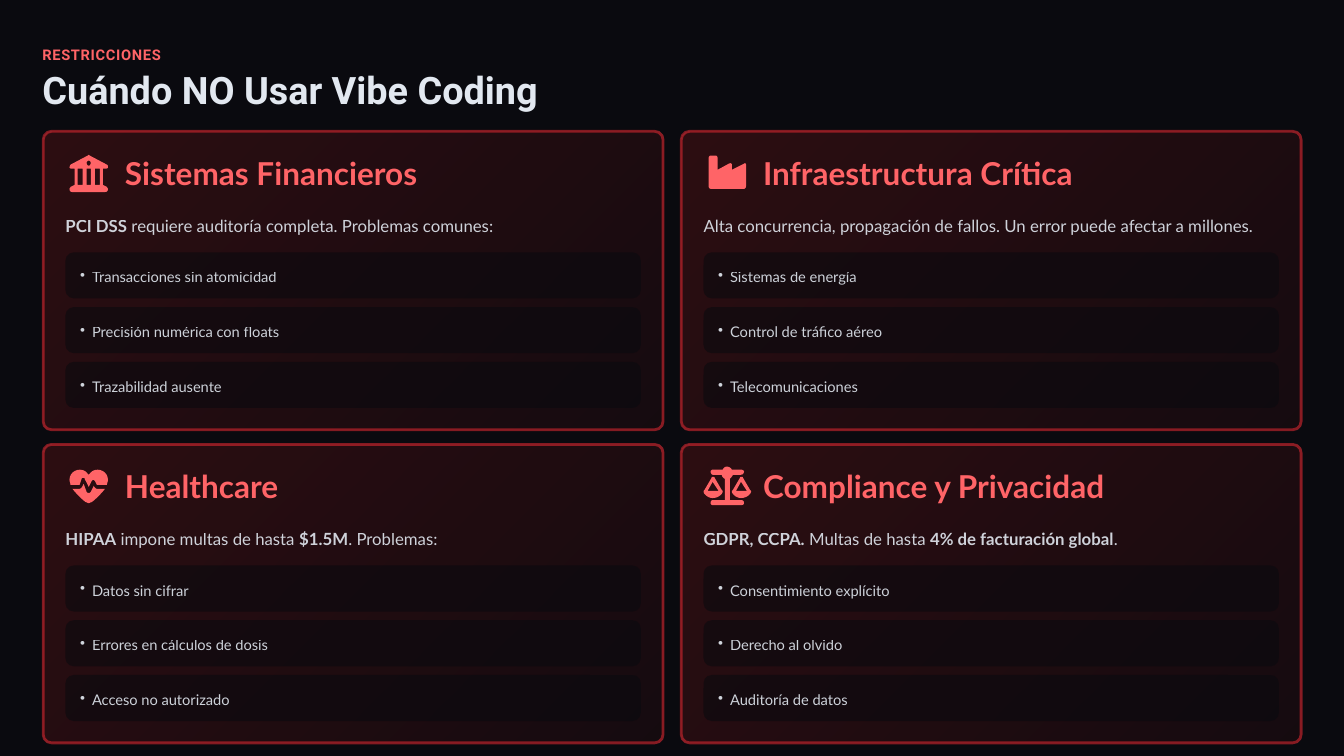
from lxml import etree
from pptx import Presentation
from pptx.dml.color import RGBColor
from pptx.enum.shapes import MSO_SHAPE
from pptx.enum.text import MSO_ANCHOR, PP_ALIGN
from pptx.oxml.ns import qn
from pptx.util import Cm, Pt

ROUNDED = MSO_SHAPE.ROUNDED_RECTANGLE
MIDDLE = MSO_ANCHOR.MIDDLE
LEFT = PP_ALIGN.LEFT

NIGHT = RGBColor(0x0A, 0x0A, 0x0F)
PALE = RGBColor(0xE2, 0xE8, 0xF0)
CORAL = RGBColor(0xFF, 0x64, 0x67)
RED = RGBColor(0xFB, 0x2C, 0x36)
MAROON = RGBColor(0x82, 0x18, 0x1A)

EYEBROW = {"name": "Roboto", "size": Pt(10.5), "bold": True}
TITLE = {"name": "Roboto", "size": Pt(27), "bold": True}
HEADING = {"name": "Lato", "size": Pt(22.5), "bold": True}
INTRO = {"name": "Lato", "size": Pt(12)}
ITEM = {"name": "Lato", "size": Pt(10.5)}

RADIUS = Cm(0.21)
PAD = Cm(0.56)
ICON_HEIGHT = Cm(0.97)
ICON_UNITS = 38
CURVE_STEPS = 6

BANK = [
    [(24, 2), (23, 1, 23, 1, 22, 2), (5, 11), (5, 11, 4, 13, 4, 14), (5, 15, 6, 15, 7, 15),
     (9, 15), (9, 31), (5, 33), (5, 34, 4, 34, 4, 35), (4, 37, 5, 38, 7, 38), (39, 38),
     (41, 38, 42, 37, 42, 35), (42, 34, 41, 34, 41, 33), (37, 31), (37, 15), (39, 15),
     (40, 15, 41, 15, 42, 14), (42, 13, 42, 11, 41, 11)],
    [(23, 7), (24, 7, 25, 8, 25, 9), (25, 11, 24, 12, 23, 12), (22, 12, 21, 11, 21, 9),
     (21, 8, 22, 7, 23, 7)],
] + [[(x1, 15), (x1, 31), (x2, 31), (x2, 15)] for x1, x2 in ((12, 17), (21, 25), (29, 34))]

FACTORY = [
    [(7, 2), (6, 2, 5, 3, 5, 5), (5, 32), (5, 34, 6, 35, 8, 35), (39, 35),
     (41, 35, 42, 34, 42, 32), (42, 11), (42, 10, 41, 9, 40, 10), (28, 16), (28, 11),
     (28, 10, 27, 9, 25, 10), (14, 16), (14, 5), (14, 3, 13, 2, 12, 2)],
]

HEART = [
    [(23, 8), (22, 7), (20, 4, 17, 3, 14, 3), (9, 3, 4, 7, 4, 13), (4, 15, 5, 16, 5, 18),
     (14, 18), (16, 12), (16, 11, 17, 11, 18, 11), (18, 11, 19, 11, 19, 12), (23, 20),
     (26, 14), (26, 14, 27, 13, 28, 13), (28, 13, 29, 14, 29, 14), (31, 18), (41, 18),
     (41, 16, 42, 15, 42, 13), (42, 7, 37, 3, 32, 3), (29, 3, 26, 4, 24, 7)],
    [(39, 22), (32, 22), (30, 22, 29, 21, 28, 19), (25, 25), (24, 26, 24, 26, 23, 26),
     (22, 26, 22, 26, 21, 25), (18, 17), (17, 19), (16, 21, 15, 22, 13, 22), (7, 22),
     (11, 27, 16, 32, 20, 35), (21, 35, 22, 36, 23, 36), (24, 36, 25, 35, 26, 35),
     (30, 32, 35, 27, 39, 22)],
]

SCALES = [
    [(28, 3), (37, 3), (39, 3, 40, 4, 40, 5), (40, 6, 39, 8, 37, 8), (29, 8),
     (29, 9, 27, 11, 26, 12), (26, 33), (37, 33), (39, 33, 40, 34, 40, 36),
     (40, 37, 39, 38, 37, 38), (9, 38), (8, 38, 7, 37, 7, 36), (7, 34, 8, 33, 9, 33),
     (21, 33), (21, 12), (19, 11, 18, 9, 18, 8), (9, 8), (8, 8, 7, 6, 7, 5),
     (7, 4, 8, 3, 9, 3), (19, 3), (20, 1, 21, 0, 23, 0), (25, 0, 27, 1, 28, 3)],
]
for d in (0, 28):
    SCALES += [
        [(d + 4, 24), (d + 15, 24), (d + 9, 15)],
        [(d + 9, 31), (d + 5, 31, d + 1, 28, d, 25), (d, 24, d, 24, d + 1, 23), (d + 8, 11),
         (d + 8, 10, d + 9, 10, d + 9, 10), (d + 10, 10, d + 11, 10, d + 11, 11), (d + 18, 23),
         (d + 19, 24, d + 19, 24, d + 19, 25), (d + 18, 28, d + 14, 31, d + 9, 31)],
    ]

CARDS = [
    (BANK, "Sistemas Financieros",
     "**PCI DSS** requiere auditoría completa. Problemas comunes:",
     ["Transacciones sin atomicidad", "Precisión numérica con floats", "Trazabilidad ausente"]),
    (FACTORY, "Infraestructura Crítica",
     "Alta concurrencia, propagación de fallos. Un error puede afectar a millones.",
     ["Sistemas de energía", "Control de tráfico aéreo", "Telecomunicaciones"]),
    (HEART, "Healthcare",
     "**HIPAA** impone multas de hasta **$1.5M**. Problemas:",
     ["Datos sin cifrar", "Errores en cálculos de dosis", "Acceso no autorizado"]),
    (SCALES, "Compliance y Privacidad",
     "**GDPR, CCPA.** Multas de hasta **4% de facturación global**.",
     ["Consentimiento explícito", "Derecho al olvido", "Auditoría de datos"]),
]


def fade(element, *percents):
    for clr, percent in zip(element.iter(qn("a:srgbClr")), percents):
        etree.SubElement(clr, qn("a:alpha")).set("val", str(percent * 1000))


def write(sp, text, style, color, spacing=1.0, opacity=100, inset=0):
    tf = sp.text_frame
    frame = {"word_wrap": True, "vertical_anchor": MIDDLE, "margin_left": inset,
             "margin_right": inset, "margin_top": 0, "margin_bottom": 0}
    for key, value in frame.items():
        setattr(tf, key, value)
    p = tf.paragraphs[0]
    p.alignment = LEFT
    p.line_spacing = spacing
    for i, part in enumerate(text.split("**")):
        if not part:
            continue
        r = p.add_run()
        r.text = part
        for key, value in {"bold": i % 2 == 1, **style}.items():
            setattr(r.font, key, value)
        r.font.color.rgb = color
        if opacity < 100:
            fade(r._r, opacity)
    return p


def add_panel(s, x, y, w, h):
    sp = s.shapes.add_shape(ROUNDED, x, y, w, h)
    sp.shadow.inherit = False
    sp.adjustments[0] = RADIUS / h
    return sp


def flatten(contour, unit):
    points = [contour[0]]
    for step in contour[1:]:
        if len(step) == 2:
            points.append(step)
            continue
        x0, y0 = points[-1]
        x1, y1, x2, y2, x3, y3 = step
        for i in range(1, CURVE_STEPS + 1):
            t = i / CURVE_STEPS
            a, b, c, d = (1 - t) ** 3, 3 * t * (1 - t) ** 2, 3 * t * t * (1 - t), t ** 3
            points.append((a * x0 + b * x1 + c * x2 + d * x3, a * y0 + b * y1 + c * y2 + d * y3))
    return [(x * unit, y * unit) for x, y in points]


def add_icon(s, contours, x, y, height):
    outlines = [flatten(contour, height / ICON_UNITS) for contour in contours]
    builder = s.shapes.build_freeform(*outlines[0][0])
    for i, points in enumerate(outlines):
        if i:
            builder.move_to(*points[0])
        builder.add_line_segments(points[1:], close=True)
    sp = builder.convert_to_shape(x, y)
    sp.shadow.inherit = False
    sp.fill.solid()
    sp.fill.fore_color.rgb = CORAL
    sp.line.fill.background()


def add_item(s, text, x, y, w, h):
    sp = add_panel(s, x, y, w, h)
    sp.fill.solid()
    sp.fill.fore_color.rgb = NIGHT
    sp.line.fill.background()
    fade(sp._element.spPr, 60)
    p = write(sp, text, ITEM, PALE, 1.2, 90, Cm(0.31))
    pPr = p._p.get_or_add_pPr()
    pPr.set("marL", str(Cm(0.3)))
    pPr.set("indent", str(-Cm(0.3)))
    etree.SubElement(pPr, qn("a:buChar")).set("char", "•")


def add_card(s, card, x, y, w, h):
    icon, heading, intro, items = card
    sp = add_panel(s, x, y, w, h)
    sp.fill.gradient()
    sp.fill.gradient_angle = 315
    for stop in sp.fill.gradient_stops:
        stop.color.rgb = MAROON
    sp.line.color.rgb = RED
    sp.line.width = Pt(2)
    fade(sp._element.spPr, 30, 10, 50)

    inner = w - 2 * PAD
    add_icon(s, icon, x + PAD, y + PAD, ICON_HEIGHT)
    box = s.shapes.add_textbox(x + Cm(2.06), y + PAD, w - Cm(2.06) - PAD, ICON_HEIGHT)
    write(box, heading, HEADING, CORAL)
    box = s.shapes.add_textbox(x + PAD, y + Cm(1.93), inner, Cm(0.69))
    write(box, intro, INTRO, PALE, 1.4, 90)
    for i, item in enumerate(items):
        add_item(s, item, x + PAD, y + Cm(3.05) + i * Cm(1.38), inner, Cm(1.16))


def add_header(s, x, y, w):
    box = s.shapes.add_textbox(x, y, w, Cm(0.53))
    p = write(box, "RESTRICCIONES", EYEBROW, CORAL, 1.2)
    p.runs[0].font._element.set("spc", "50")
    box = s.shapes.add_textbox(x, y + Cm(0.73), w, Cm(1.07))
    write(box, "Cuándo NO Usar Vibe Coding", TITLE, PALE, 0.9)


def main():
    prs = Presentation()
    prs.slide_width, prs.slide_height = Cm(33.87), Cm(19.05)
    s = prs.slides.add_slide(prs.slide_layouts[6])
    s.background.fill.solid()
    s.background.fill.fore_color.rgb = NIGHT
    add_header(s, Cm(1.07), Cm(1.07), Cm(32))
    for i, card in enumerate(CARDS):
        row, col = divmod(i, 2)
        add_card(s, card, Cm(1.09) + col * Cm(16.08), Cm(3.31) + row * Cm(7.89),
                 Cm(15.62), Cm(7.52))
    prs.save("out.pptx")


if __name__ == "__main__":
    main()
